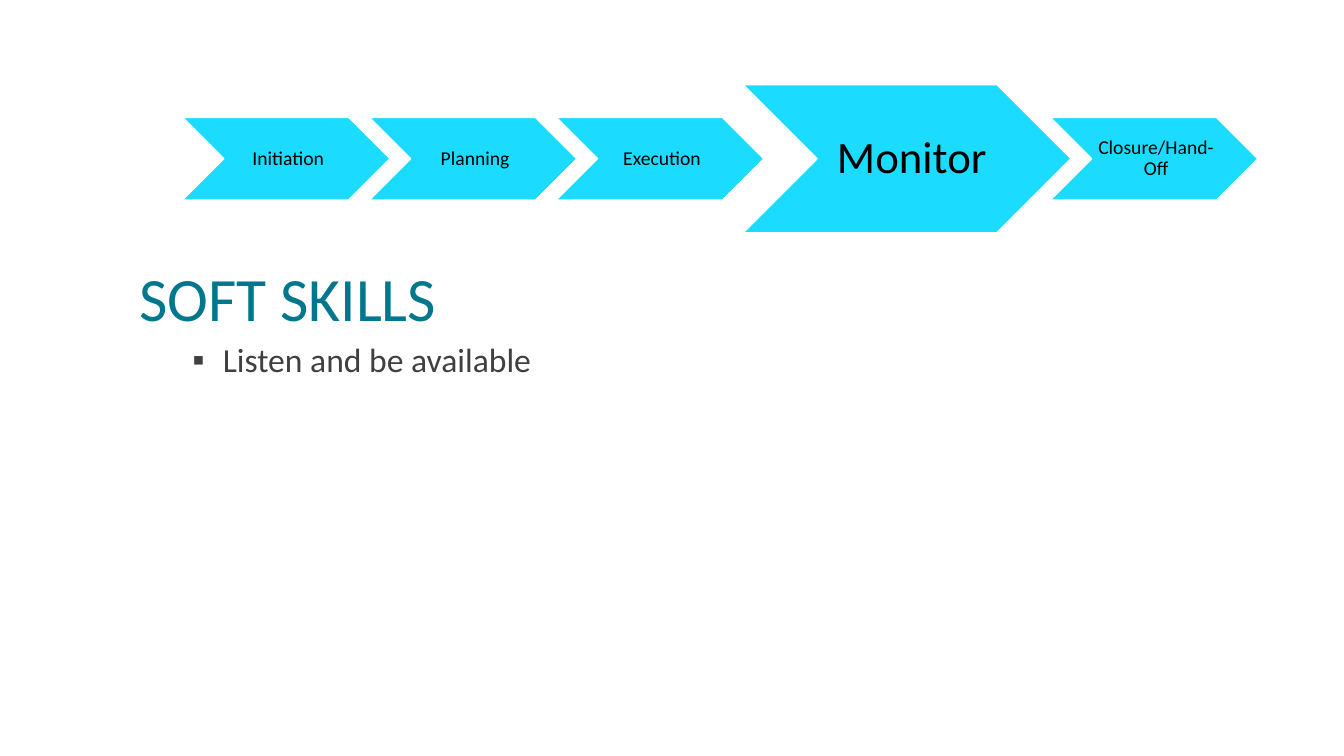
"""Build the slide on soft skills in the monitoring phase of a project."""
from dataclasses import dataclass

import pptx
import pptx.dml.color
import pptx.enum.shapes
import pptx.enum.text
import pptx.oxml.ns
import pptx.util
from lxml import etree
from pptx.util import Cm


@dataclass(frozen=True)
class Theme:
    font: str = "Calibri"
    heading_color: str = "00778D"
    skill_color: str = "404040"
    phase_color: str = "1BDCFF"
    phase_outline: str = "FFFFFF"
    phase_text: str = "000000"
    heading_size: int = 44
    skill_size: int = 24
    phase_size: int = 14
    current_phase_size: int = 32


THEME = Theme()
PHASES = ["Initiation", "Planning", "Execution", "Monitor", "Closure/Hand-Off"]
CURRENT_PHASE = "Monitor"
PHASES_LEFT, PHASES_MIDDLE, PHASE_OVERLAP = 4.6, 4.0, 0.52


def rgb(color):
    return pptx.dml.color.RGBColor.from_string(color)


def format_paragraph(paragraph, size, color, alignment, line_spacing):
    paragraph.alignment = alignment
    paragraph.line_spacing = line_spacing
    paragraph.space_before = pptx.util.Pt(0)
    for run in paragraph.runs:
        run.font.name = THEME.font
        run.font.size = pptx.util.Pt(size)
        run.font.color.rgb = rgb(color)


def place(placeholder, left, top, width, height, anchor):
    placeholder.left, placeholder.top = Cm(left), Cm(top)
    placeholder.width, placeholder.height = Cm(width), Cm(height)
    placeholder.text_frame.auto_size = pptx.enum.text.MSO_AUTO_SIZE.NONE
    placeholder.text_frame.vertical_anchor = anchor


def add_bullet(paragraph, character, indent):
    properties = paragraph._p.get_or_add_pPr()
    properties.set("marL", str(Cm(indent)))
    properties.set("indent", str(-Cm(indent)))
    bullet_font = etree.SubElement(properties, pptx.oxml.ns.qn("a:buFont"))
    bullet_font.set("typeface", THEME.font)
    bullet = etree.SubElement(properties, pptx.oxml.ns.qn("a:buChar"))
    bullet.set("char", character)


def write_heading(heading, text):
    place(heading, 3.25, 4.95, 26.04, 3.6, pptx.enum.text.MSO_ANCHOR.BOTTOM)
    heading.text_frame.text = text
    format_paragraph(heading.text_frame.paragraphs[0], THEME.heading_size,
                     THEME.heading_color, pptx.enum.text.PP_ALIGN.LEFT, 0.85)


def write_skills(skills, text):
    place(skills, 4.6, 8.53, 26.04, 10.5, pptx.enum.text.MSO_ANCHOR.TOP)
    skills.text_frame.text = text
    for skill in skills.text_frame.paragraphs:
        add_bullet(skill, "▪", 0.76)
        format_paragraph(skill, THEME.skill_size, THEME.skill_color,
                         pptx.enum.text.PP_ALIGN.LEFT, 0.9)


def add_phase(slide, name, left, width, height, size, inset):
    phase = slide.shapes.add_shape(
        pptx.enum.shapes.MSO_SHAPE.CHEVRON,
        Cm(left), Cm(PHASES_MIDDLE - height / 2), Cm(width), Cm(height))
    phase.shadow.inherit = False
    phase.fill.solid()
    phase.fill.fore_color.rgb = rgb(THEME.phase_color)
    phase.line.color.rgb = rgb(THEME.phase_outline)
    phase.line.width = pptx.util.Pt(1)
    label = phase.text_frame
    label.text = name
    label.word_wrap = True
    label.vertical_anchor = pptx.enum.text.MSO_ANCHOR.MIDDLE
    label.margin_left = Cm(3 * inset)
    label.margin_right = label.margin_top = label.margin_bottom = Cm(inset)
    format_paragraph(label.paragraphs[0], size, THEME.phase_text,
                     pptx.enum.text.PP_ALIGN.CENTER, 0.9)


def add_phases(slide):
    left = PHASES_LEFT
    for name in PHASES:
        if name == CURRENT_PHASE:
            width, height, size, inset = 8.26, 3.73, THEME.current_phase_size, 0.12
        else:
            width, height, size, inset = 5.23, 2.08, THEME.phase_size, 0.05
        add_phase(slide, name, left, width, height, size, inset)
        left += width - PHASE_OVERLAP


def main():
    presentation = pptx.Presentation()
    presentation.slide_width, presentation.slide_height = Cm(33.87), Cm(19.05)
    slide = presentation.slides.add_slide(presentation.slide_layouts[1])
    write_heading(slide.shapes.title, "SOFT SKILLS")
    write_skills(slide.placeholders[1], "Listen and be available")
    add_phases(slide)
    presentation.save("out.pptx")


if __name__ == "__main__":
    main()
